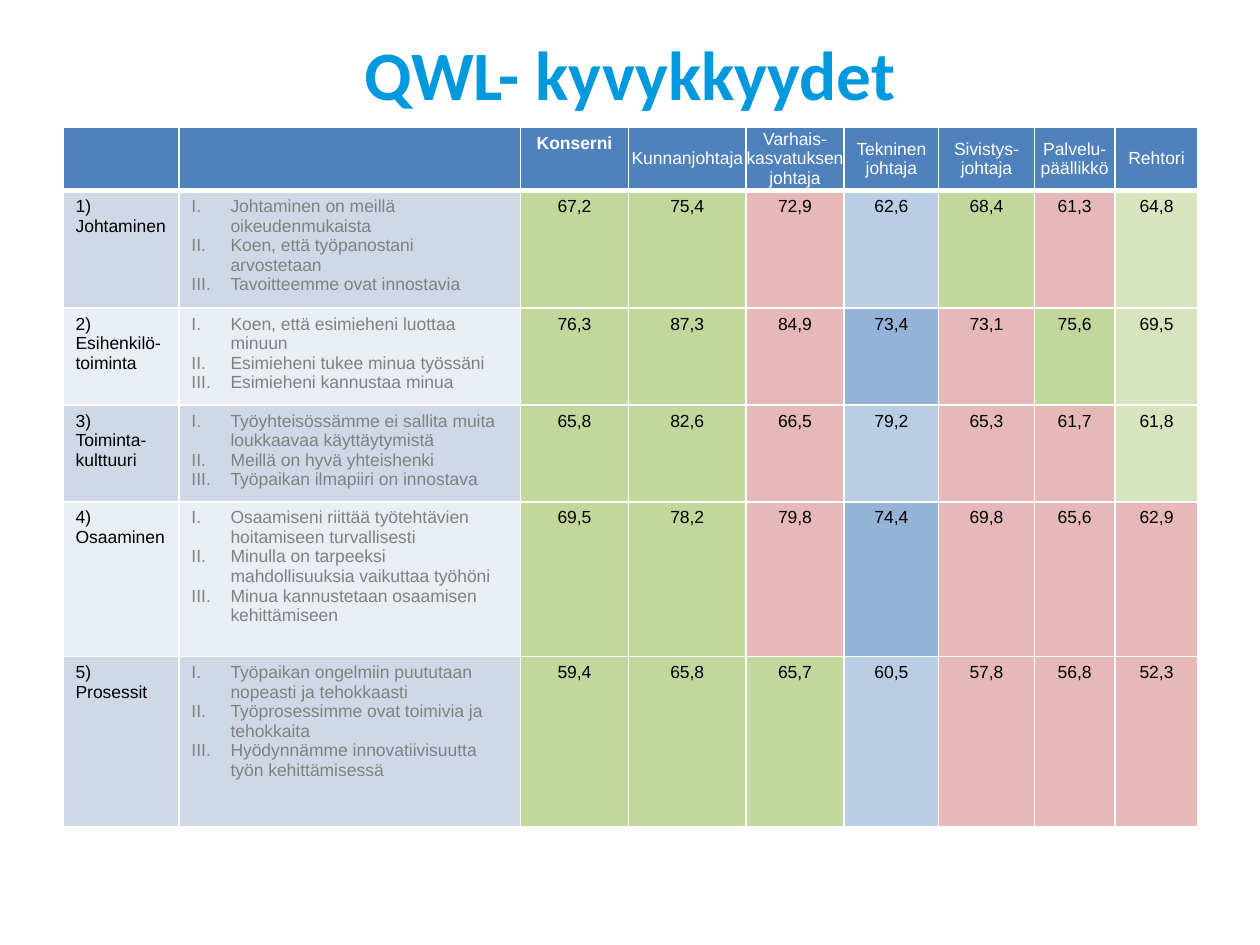
from dataclasses import dataclass

from lxml import etree
from pptx import Presentation
from pptx.dml.color import RGBColor
from pptx.enum import text as t
from pptx.oxml import ns
from pptx.util import Inches, Pt


@dataclass(frozen=True)
class Theme:
    title: str = "0099DD"
    header: str = "4F81BD"
    bands: tuple = ("D0D8E8", "E9EDF4")
    white: str = "FFFFFF"
    black: str = "000000"
    grey: str = "808080"
    title_size: float = 39.6
    table_size: float = 10
    title_font: str = "Calibri"
    table_font: str = "Arial"


THEME = Theme()
SCORE_FILLS = {"G": "C3D69B", "g": "D7E4BD", "R": "E6B9B8", "b": "B9CDE5", "B": "95B3D7"}

COLUMN_WIDTHS = [0.92, 2.71, 0.86, 0.93, 0.78, 0.75, 0.76, 0.64, 0.66]
HEADERS = ["", "", "Konserni", "Kunnanjohtaja", "Varhais-\nkasvatuksen johtaja",
           "Tekninen johtaja", "Sivistys-\njohtaja", "Palvelu-\npäällikkö", "Rehtori"]
HEADER_HEIGHT = 0.48

# Capability, statements, scores, fill key of each score, row height
ROWS = [
    ("1) Johtaminen",
     "Johtaminen on meillä oikeudenmukaista\nKoen, että työpanostani arvostetaan\n"
     "Tavoitteemme ovat innostavia",
     "67,2 75,4 72,9 62,6 68,4 61,3 64,8", "GGRbGRg", 0.9),
    ("2) Esihenkilö-\ntoiminta",
     "Koen, että esimieheni luottaa minuun\nEsimieheni tukee minua työssäni\n"
     "Esimieheni kannustaa minua",
     "76,3 87,3 84,9 73,4 73,1 75,6 69,5", "GGRBRGg", 0.74),
    ("3) Toiminta-\nkulttuuri",
     "Työyhteisössämme ei sallita muita loukkaavaa käyttäytymistä\n"
     "Meillä on hyvä yhteishenki\nTyöpaikan ilmapiiri on innostava",
     "65,8 82,6 66,5 79,2 65,3 61,7 61,8", "GGRbRRg", 0.74),
    ("4) Osaaminen",
     "Osaamiseni riittää työtehtävien hoitamiseen turvallisesti\n"
     "Minulla on tarpeeksi mahdollisuuksia vaikuttaa työhöni\n"
     "Minua kannustetaan osaamisen kehittämiseen",
     "69,5 78,2 79,8 74,4 69,8 65,6 62,9", "GGRBRRR", 1.23),
    ("5) Prosessit",
     "Työpaikan ongelmiin puututaan nopeasti ja tehokkaasti\n"
     "Työprosessimme ovat toimivia ja tehokkaita\n"
     "Hyödynnämme innovatiivisuutta työn kehittämisessä",
     "59,4 65,8 65,7 60,5 57,8 56,8 52,3", "GGGbRRR", 1.35),
]


def apply(target, values):
    for name, value in values.items():
        setattr(target, name, value)


def add_numbering(paragraph):
    properties = paragraph._p.get_or_add_pPr()
    properties.set("marL", str(Inches(0.31)))
    properties.set("indent", str(-Inches(0.31)))
    etree.SubElement(properties, ns.qn("a:buFont"), typeface="+mj-lt")
    etree.SubElement(properties, ns.qn("a:buAutoNum"), type="romanUcPeriod")


def write(frame, content, color, size, font, bold=False, align=t.PP_ALIGN.LEFT, numbered=False):
    frame.text = content
    for paragraph in frame.paragraphs:
        paragraph.alignment = align
        if numbered:
            add_numbering(paragraph)
        for run in paragraph.runs:
            apply(run.font, {"size": Pt(size), "name": font, "bold": bold})
            run.font.color.rgb = RGBColor.from_string(color)


def set_borders(cell, **widths):
    properties = cell._tc.get_or_add_tcPr()
    for side in "LRTB":
        line = etree.SubElement(properties, ns.qn(f"a:ln{side}"), w=str(Pt(widths.get(side, 1))))
        fill = etree.SubElement(line, ns.qn("a:solidFill"))
        etree.SubElement(fill, ns.qn("a:srgbClr"), val=THEME.white)


def fill_cell(cell, content, fill, color, borders, **style):
    set_borders(cell, **borders)
    cell.fill.solid()
    cell.fill.fore_color.rgb = RGBColor.from_string(fill)
    if content:
        write(cell.text_frame, content, color, THEME.table_size, THEME.table_font, **style)


def add_title(slide, box):
    frame = slide.shapes.add_textbox(*map(Inches, box)).text_frame
    apply(frame, {"word_wrap": True, "vertical_anchor": t.MSO_ANCHOR.MIDDLE})
    write(frame, "QWL- kyvykkyydet", THEME.title, THEME.title_size, THEME.title_font,
          bold=True, align=t.PP_ALIGN.CENTER)


def add_header(table):
    for column, label in enumerate(HEADERS):
        cell = table.cell(0, column)
        fill_cell(cell, label, THEME.header, THEME.white, {"B": 3},
                  bold=label == "Konserni", align=t.PP_ALIGN.CENTER)
        if column > 2:
            apply(cell, {"margin_left": 0, "margin_right": 0, "margin_top": 0,
                         "margin_bottom": 0, "vertical_anchor": t.MSO_ANCHOR.MIDDLE})


def add_score_table(slide, box):
    table = slide.shapes.add_table(len(ROWS) + 1, len(HEADERS), *map(Inches, box)).table
    for column, width in zip(table.columns, COLUMN_WIDTHS):
        column.width = Inches(width)
    heights = [HEADER_HEIGHT] + [row[-1] for row in ROWS]
    for row, height in zip(table.rows, heights):
        row.height = Inches(height)

    add_header(table)
    for index, (capability, statements, scores, fills, _) in enumerate(ROWS, 1):
        band = THEME.bands[(index - 1) % 2]
        borders = {"T": 3} if index == 1 else {}
        fill_cell(table.cell(index, 0), capability, band, THEME.black, borders)
        fill_cell(table.cell(index, 1), statements, band, THEME.grey, borders, numbered=True)
        for column, (score, key) in enumerate(zip(scores.split(), fills), 2):
            fill_cell(table.cell(index, column), score, SCORE_FILLS[key], THEME.black,
                      borders, align=t.PP_ALIGN.CENTER)


def main():
    presentation = Presentation()
    apply(presentation, {"slide_width": Inches(10), "slide_height": Inches(7.5)})
    slide = presentation.slides.add_slide(presentation.slide_layouts[6])
    add_title(slide, (0.5, 0.16, 9, 0.83))
    add_score_table(slide, (0.5, 1.01, 9, 5.44))
    presentation.save("out.pptx")


if __name__ == "__main__":
    main()
